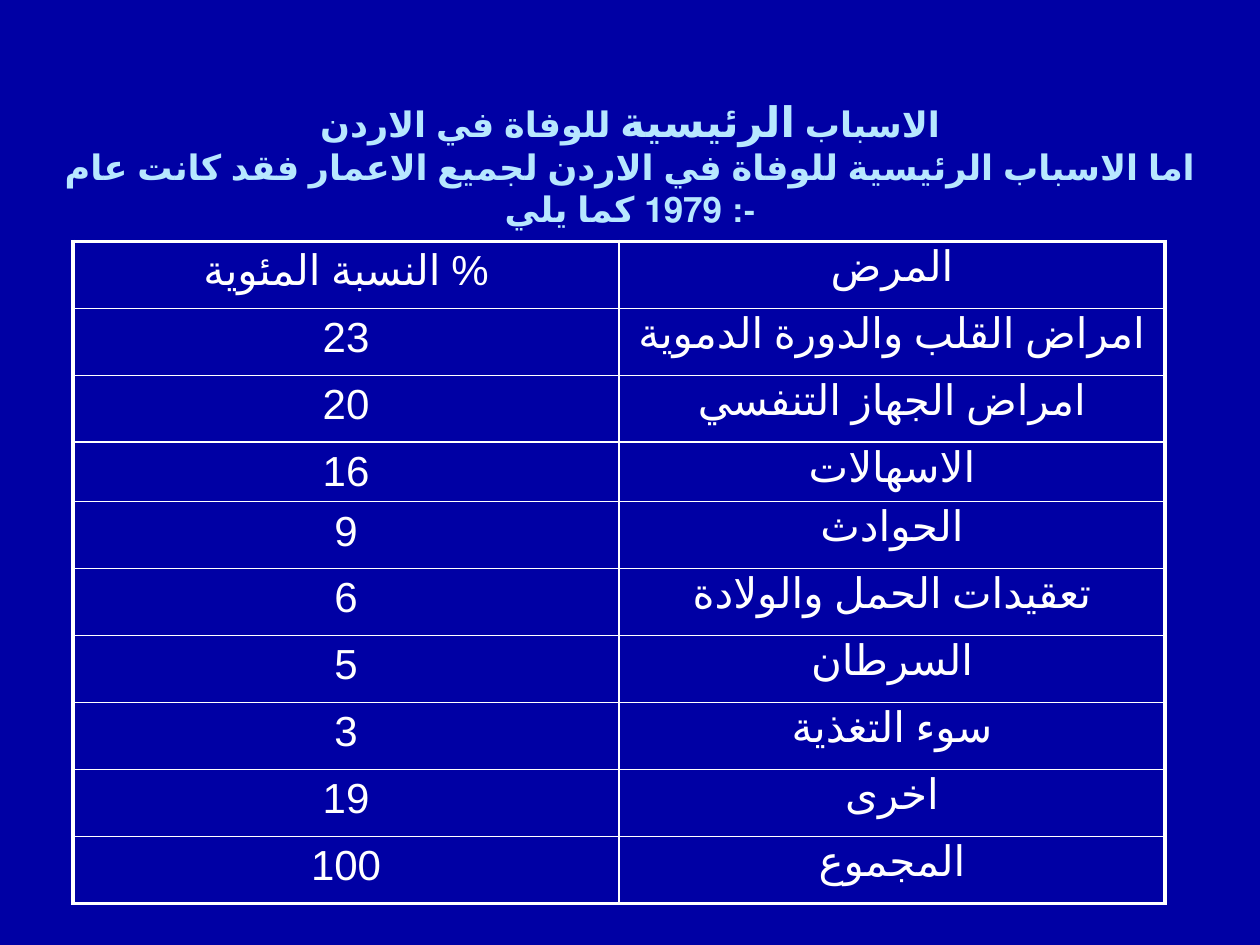
"""Build a slide with a table of the leading causes of death in Jordan."""
from typing import NamedTuple

from lxml import etree
from pptx import Presentation
from pptx import util as u
from pptx.dml.color import RGBColor
from pptx.enum import lang, text
from pptx.oxml import ns

COLORS = {"background": "0000A4", "title": "B7E7FF", "table": "FFFFFF"}
FONT = "Arial"
OUTER_LINE, INNER_LINE = 2.25, 1
TABLE_LEFT, TABLE_TOP, COLUMN_WIDTH = 41.75, 138, 312
ROW_HEIGHT, SHORT_ROW_HEIGHT = 38.25, 33.75


class Cause(NamedTuple):
    """One table row, in column order."""
    share: str
    disease: str
    height: float = ROW_HEIGHT


CAUSES = [
    Cause("النسبة المئوية %", "المرض"),
    Cause("23", "امراض القلب والدورة الدموية"),
    Cause("20", "امراض الجهاز التنفسي"),
    Cause("16", "الاسهالات", SHORT_ROW_HEIGHT),
    Cause("9", "الحوادث"),
    Cause("6", "تعقيدات الحمل والولادة"),
    Cause("5", "السرطان"),
    Cause("3", "سوء التغذية"),
    Cause("19", "اخرى"),
    Cause("100", "المجموع"),
]


def add_text(paragraph, content: str, *, size: float, color: str, bold: bool = False) -> None:
    """Append a formatted Arabic run to a centred paragraph."""
    paragraph.alignment = text.PP_ALIGN.CENTER
    run = paragraph.add_run()
    run.text = content
    font = run.font
    font.name, font.size, font.bold = FONT, u.Pt(size), bold
    font.language_id = lang.MSO_LANGUAGE_ID.ARABIC
    font.color.rgb = RGBColor.from_string(COLORS[color])


def set_borders(cell, widths: dict[str, float]) -> None:
    """Draw solid cell borders, given in schema order."""
    properties = cell._tc.get_or_add_tcPr()
    for index, (side, width) in enumerate(widths.items()):
        line = etree.Element(ns.qn(f"a:ln{side}"), w=str(u.Pt(width)))
        fill = etree.SubElement(line, ns.qn("a:solidFill"))
        etree.SubElement(fill, ns.qn("a:srgbClr"), val=COLORS["table"])
        properties.insert(index, line)


def add_title(slide) -> None:
    """Fill and place the title placeholder."""
    title = slide.shapes.title
    title.left, title.top = u.Pt(24), u.Pt(66)
    title.width, title.height = u.Pt(672), u.Pt(54)
    frame = title.text_frame
    frame.word_wrap = True
    frame.auto_size = text.MSO_AUTO_SIZE.NONE
    frame.vertical_anchor = text.MSO_ANCHOR.MIDDLE
    paragraph = frame.paragraphs[0]
    for content, size in (("الاسباب ", 20), ("الرئيسية", 24), (" للوفاة في الاردن", 20)):
        add_text(paragraph, content, size=size, color="title", bold=True)
    paragraph.add_line_break()
    add_text(
        paragraph,
        "اما الاسباب الرئيسية للوفاة في الاردن لجميع الاعمار فقد كانت عام 1979 كما يلي :-",
        size=20, color="title", bold=True,
    )


def add_causes_table(slide, causes: list[Cause]) -> None:
    """Add the table with a heavy outline and thin inner lines."""
    frame = slide.shapes.add_table(
        len(causes), 2, u.Pt(TABLE_LEFT), u.Pt(TABLE_TOP),
        u.Pt(2 * COLUMN_WIDTH), u.Pt(sum(cause.height for cause in causes)),
    )
    table = frame.table
    table.first_row = table.horz_banding = False
    for column in table.columns:
        column.width = u.Pt(COLUMN_WIDTH)
    last_row = len(causes) - 1
    for row, cause in enumerate(causes):
        table.rows[row].height = u.Pt(cause.height)
        for column, content in enumerate((cause.share, cause.disease)):
            cell = table.cell(row, column)
            cell.fill.background()
            add_text(cell.text_frame.paragraphs[0], content, size=24, color="table")
            outer = {"L": column == 0, "R": column == 1, "T": row == 0, "B": row == last_row}
            set_borders(cell, {
                side: OUTER_LINE if is_outer else INNER_LINE
                for side, is_outer in outer.items()
            })


def main() -> None:
    """Create and save the presentation."""
    presentation = Presentation()
    presentation.slide_width, presentation.slide_height = u.Pt(720), u.Pt(540)
    slide = presentation.slides.add_slide(presentation.slide_layouts[5])
    background = slide.background.fill
    background.solid()
    background.fore_color.rgb = RGBColor.from_string(COLORS["background"])
    add_title(slide)
    add_causes_table(slide, CAUSES)
    presentation.save("out.pptx")


if __name__ == "__main__":
    main()
